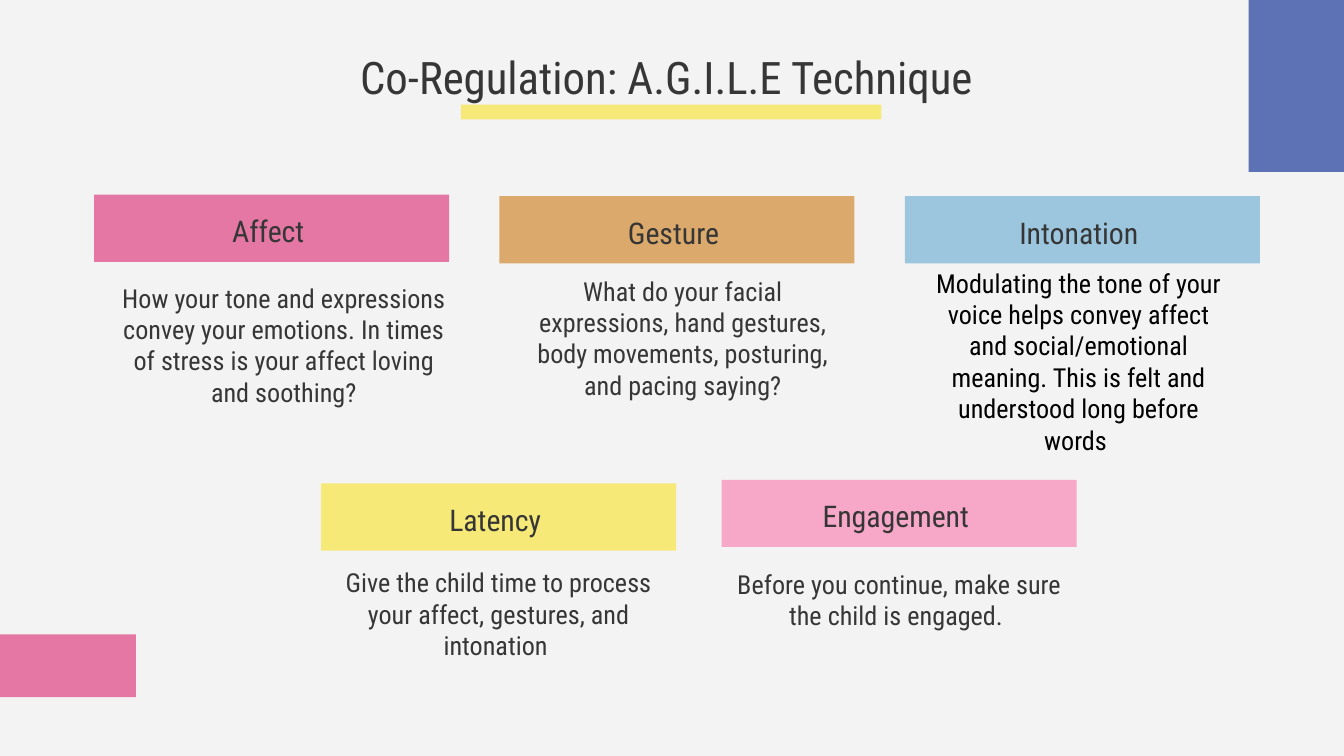
import pptx
import pptx.util
from pptx.dml.color import RGBColor
from pptx.enum.shapes import MSO_SHAPE
from pptx.enum.text import MSO_ANCHOR, MSO_AUTO_SIZE, PP_ALIGN

Cm = pptx.util.Cm
FONT, DARK, BLACK = "Roboto Condensed", "363636", "000000"
PINK, YELLOW = "E477A3", "F6E977"
CARD_W, HEAD_H, BODY_H = 6.71, 1.27, 4.11

TITLE = "Co-Regulation: A.G.I.L.E Technique "
# left, top, width, height in cm, fill
BARS = [
    (0, 11.99, 2.57, 1.19, PINK),
    (23.6, 0, 1.8, 3.25, "5C72B4"),
    (8.71, 1.98, 7.95, 0.28, YELLOW),
]
# first left, step between cards, cards:
# heading, fill, heading top, text, text colour, (text left offset, top, width)
ROWS = [
    (1.78, 7.66, [
        ("Affect ", PINK, 3.68,
         "How your tone and expressions convey your emotions. "
         "In times of stress is your affect loving and soothing?",
         DARK, (0.23, 5.08, CARD_W)),
        ("Gesture ", "DBA96B", 3.71,
         "What do your facial expressions, hand gestures, "
         "body movements, posturing, and pacing saying?",
         DARK, (0.11, 4.95, CARD_W)),
        ("Intonation ", "9CC6DE", 3.71,
         "Modulating the tone of your voice helps convey affect and "
         "social/emotional meaning. This is felt and understood long before words ",
         BLACK, (0.15, 4.8, 6.27)),
    ]),
    (6.07, 7.57, [
        ("Latency ", YELLOW, 9.14,
         "Give the child time to process your affect, gestures, and intonation ",
         DARK, (0, 10.46, CARD_W)),
        ("Engagement ", "F7A7C7", 9.07,
         "Before you continue, make sure the child is engaged. ",
         DARK, (0, 10.49, CARD_W)),
    ]),
]


def rgb(value):
    return RGBColor.from_string(value)


def write(sp, text, size, color=DARK, anchor=MSO_ANCHOR.TOP):
    tf = sp.text_frame
    inset = Cm(0.25)
    frame = dict(word_wrap=True, auto_size=MSO_AUTO_SIZE.NONE, vertical_anchor=anchor,
                 margin_left=inset, margin_right=inset, margin_top=inset, margin_bottom=inset)
    for name, value in frame.items():
        setattr(tf, name, value)
    p = tf.paragraphs[0]
    p.alignment = PP_ALIGN.CENTER
    r = p.add_run()
    r.text = text
    for name, value in dict(name=FONT, size=pptx.util.Pt(size)).items():
        setattr(r.font, name, value)
    r.font.color.rgb = rgb(color)


def add_bar(s, left, top, width, height, fill):
    sp = s.shapes.add_shape(MSO_SHAPE.RECTANGLE, Cm(left), Cm(top), Cm(width), Cm(height))
    sp.shadow.inherit = False
    sp.fill.solid()
    sp.fill.fore_color.rgb = rgb(fill)
    sp.line.fill.background()
    return sp


def add_card(s, left, heading, fill, top, text, color, body):
    head = add_bar(s, left, top, CARD_W, HEAD_H, fill)
    write(head, heading, 16, anchor=MSO_ANCHOR.BOTTOM)
    dx, body_top, width = body
    box = s.shapes.add_textbox(Cm(left + dx), Cm(body_top), Cm(width), Cm(BODY_H))
    write(box, text, 14, color)


def main():
    prs = pptx.Presentation()
    prs.slide_width, prs.slide_height = Cm(25.4), Cm(14.29)
    s = prs.slides.add_slide(prs.slide_layouts.get_by_name("Title Only"))
    s.background.fill.solid()
    s.background.fill.fore_color.rgb = rgb("F3F3F3")

    for bar in BARS:
        add_bar(s, *bar)

    title = s.shapes.title
    place = dict(left=0.86, top=0.69, width=23.67, height=1.6)
    for name, value in place.items():
        setattr(title, name, Cm(value))
    write(title, TITLE, 24)
    # bring the title in front of its underline
    s.shapes[-1].element.addnext(title.element)

    for left, step, cards in ROWS:
        for i, card in enumerate(cards):
            add_card(s, left + i * step, *card)

    prs.save("out.pptx")


if __name__ == "__main__":
    main()
